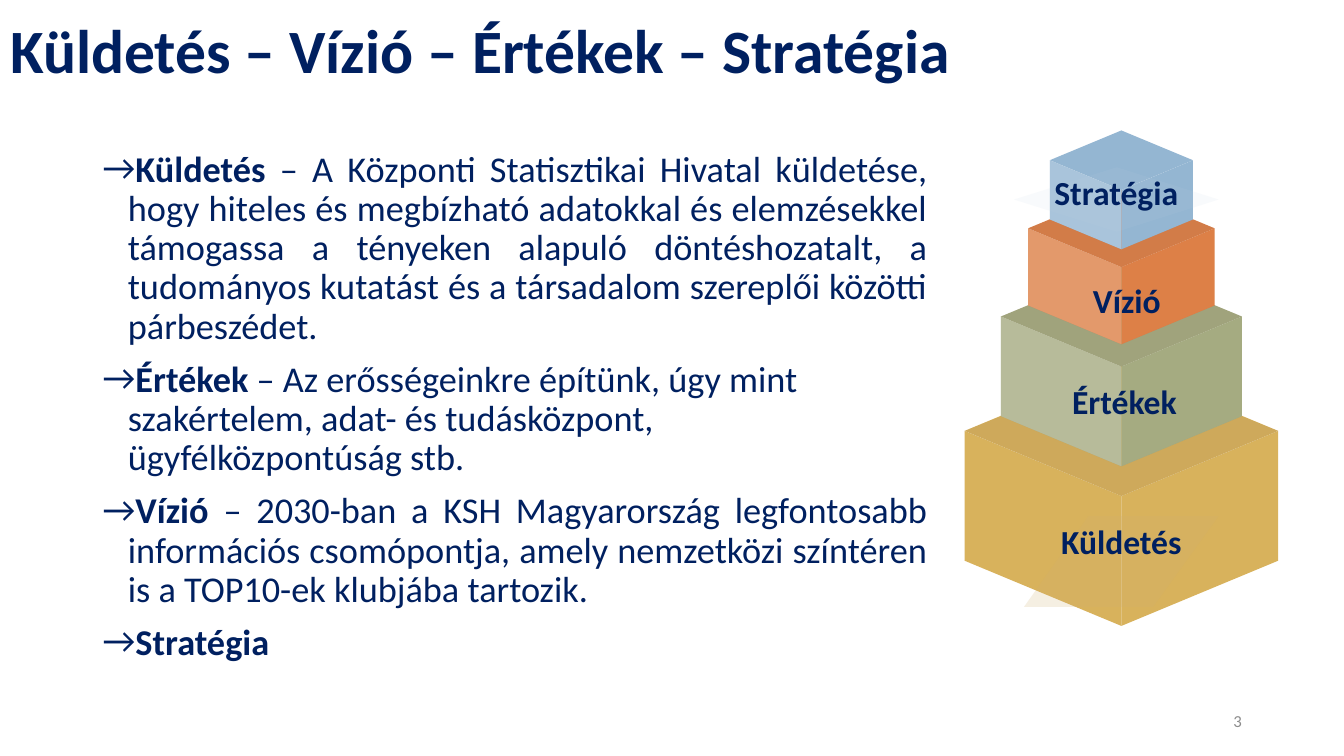
"""Build the slide on mission, vision, values and strategy with its tower of cubes."""
from dataclasses import dataclass

from lxml import etree
from pptx import Presentation
from pptx import util as u
from pptx.dml import color as dml
from pptx.enum import text as t
from pptx.oxml import ns

COLUMNS, ROWS = 160, 90
CELL = u.Inches(1) / 12
CENTRE = 133.5
RISE, BODY = 0.416, 0.828
FONT = "Calibri"
COLOURS = {
    "navy": "002060", "grey": "8C8C8C", "white": "FFFFFF", "shade": "775F55",
    "gold": "D8B25C", "green": "A5AB81", "orange": "DD8047", "blue": "94B6D2",
    "gold plate": "D0AF72", "blue plate": "BFD3E4",
}
Point = tuple[float, float]


@dataclass(frozen=True)
class Box:
    column: float
    row: float
    columns: float
    rows: float

    def emu(self) -> list[int]:
        return [grid(v) for v in (self.column, self.row, self.columns, self.rows)]


@dataclass(frozen=True)
class Cube:
    rim: float
    half: float
    colour: str

    def point(self, side: int, drop: float = 0) -> Point:
        return CENTRE + side * self.half, self.rim + drop * self.half

    def foot(self) -> list[Point]:
        return [self.point(1, BODY), self.point(0, RISE + BODY), self.point(-1, BODY)]

    def top(self) -> list[Point]:
        return [self.point(0, RISE), self.point(1), self.point(0, -RISE), self.point(-1)]

    def face(self, side: int) -> list[Point]:
        return [self.point(side), self.point(0, RISE),
                self.point(0, RISE + BODY), self.point(side, BODY)]

    def ledge(self, upper: "Cube") -> list[Point]:
        return [self.point(-1), self.point(0, RISE), self.point(1), *upper.foot()]


@dataclass(frozen=True)
class Item:
    term: str
    detail: str
    align: t.PP_ALIGN


CUBES = [
    Cube(51.3, 18.66, "gold"),
    Cube(37.68, 14.34, "green"),
    Cube(27.18, 11.1, "orange"),
    Cube(19.08, 8.52, "blue"),
]
ITEMS = [
    Item("Küldetés", " – A Központi Statisztikai Hivatal küldetése, hogy hiteles és "
         "megbízható adatokkal és elemzésekkel támogassa a tényeken alapuló döntéshozatalt, "
         "a tudományos kutatást és a társadalom szereplői közötti párbeszédet.",
         t.PP_ALIGN.JUSTIFY),
    Item("Értékek", " – Az erősségeinkre építünk, úgy mint szakértelem, adat- és "
         "tudásközpont, ügyfélközpontúság stb.", t.PP_ALIGN.LEFT),
    Item("Vízió", " – 2030-ban a KSH Magyarország legfontosabb információs csomópontja, "
         "amely nemzetközi színtéren is a TOP10-ek klubjába tartozik.", t.PP_ALIGN.JUSTIFY),
    Item("Stratégia", "", t.PP_ALIGN.LEFT),
]
GOLD_PLATE = [(145.08, 61.44), (129.6, 61.44), (121.92, 72.24), (137.28, 72.24)]
BLUE_PLATE = [(132.96, 19.92), (120.72, 23.76), (132.96, 27.6), (145.08, 23.76)]
LABELS = {"Értékek": Box(122.28, 44.76, 23.16, 10.68), "Vízió": Box(121.92, 32.76, 24.48, 9.36)}


def grid(cells: float) -> int:
    return round(cells * CELL)


def add_run(paragraph, words: str, size: float, bold: bool = False, colour: str = "navy") -> None:
    run = paragraph.add_run()
    run.text = words
    run.font.name, run.font.size, run.font.bold = FONT, u.Pt(size), bold
    run.font.color.rgb = dml.RGBColor.from_string(COLOURS[colour])


def add_text_box(slide, box: Box):
    frame = slide.shapes.add_textbox(*box.emu()).text_frame
    frame.word_wrap = True
    return frame


def add_label(frame, words: str) -> None:
    frame.vertical_anchor = t.MSO_ANCHOR.TOP
    paragraph = frame.paragraphs[0]
    paragraph.alignment = t.PP_ALIGN.CENTER
    add_run(paragraph, words, 24, bold=True)


def add_polygon(slide, points: list[Point], colour: str, opacity: int = 100):
    corners = [(grid(x), grid(y)) for x, y in points]
    builder = slide.shapes.build_freeform(*corners[0])
    builder.add_line_segments(corners[1:], close=True)
    shape = builder.convert_to_shape()
    shape.shadow.inherit = False
    shape.line.fill.background()
    shape.fill.solid()
    shape.fill.fore_color.rgb = dml.RGBColor.from_string(COLOURS[colour])
    if opacity < 100:
        tint = shape.fill._xPr.find(".//" + ns.qn("a:srgbClr"))
        etree.SubElement(tint, ns.qn("a:alpha"), val=str(opacity * 1000))
    return shape


def add_title(slide) -> None:
    title = slide.shapes.title
    title.left, title.top, title.width, title.height = Box(0, 0, 138, 12.84).emu()
    frame = title.text_frame
    frame.auto_size = t.MSO_AUTO_SIZE.NONE
    frame.vertical_anchor = t.MSO_ANCHOR.MIDDLE
    paragraph = frame.paragraphs[0]
    paragraph.alignment, paragraph.line_spacing = t.PP_ALIGN.LEFT, 0.9
    add_run(paragraph, "Küldetés – Vízió – Értékek – Stratégia", 44, bold=True)


def add_items(slide) -> None:
    frame = add_text_box(slide, Box(11.04, 17.4, 100.56, 63.72))
    for index, item in enumerate(ITEMS):
        paragraph = frame.add_paragraph() if index else frame.paragraphs[0]
        paragraph.alignment, paragraph.line_spacing = item.align, 0.9
        paragraph.space_before = u.Pt(10 if index else 0)
        properties = paragraph._p.get_or_add_pPr()
        properties.set("marL", str(grid(3)))
        properties.set("indent", str(grid(-3)))
        etree.SubElement(properties, ns.qn("a:buFont"), typeface=FONT)
        etree.SubElement(properties, ns.qn("a:buChar"), char="→")
        add_run(paragraph, item.term, 25.9, bold=True)
        if item.detail:
            add_run(paragraph, item.detail, 25.9)


def add_tower(slide) -> None:
    for cube in CUBES:
        for points in (cube.top(), cube.face(1), cube.face(-1)):
            add_polygon(slide, points, cube.colour)
    gold_plate = add_polygon(slide, GOLD_PLATE, "gold plate", 20)
    add_label(gold_plate.text_frame, "Küldetés")
    for cube in CUBES[1:]:
        add_polygon(slide, cube.face(-1), "white", 20)
    for cube, upper in zip(CUBES, CUBES[1:]):
        add_polygon(slide, cube.ledge(upper), "shade", 10)
    blue_plate = add_polygon(slide, BLUE_PLATE, "blue plate", 10)
    add_label(blue_plate.text_frame, "Stratégia")
    for words, box in LABELS.items():
        add_label(add_text_box(slide, box), words)


def add_page_number(slide) -> None:
    frame = add_text_box(slide, Box(113.04, 83.4, 36, 4.8))
    frame.vertical_anchor = t.MSO_ANCHOR.MIDDLE
    paragraph = frame.paragraphs[0]
    paragraph.alignment = t.PP_ALIGN.RIGHT
    add_run(paragraph, "3", 12, colour="grey")


def main() -> None:
    presentation = Presentation()
    presentation.slide_width, presentation.slide_height = grid(COLUMNS), grid(ROWS)
    slide = presentation.slides.add_slide(presentation.slide_layouts[5])
    add_title(slide)
    add_items(slide)
    add_page_number(slide)
    add_tower(slide)
    presentation.save("out.pptx")


if __name__ == "__main__":
    main()
